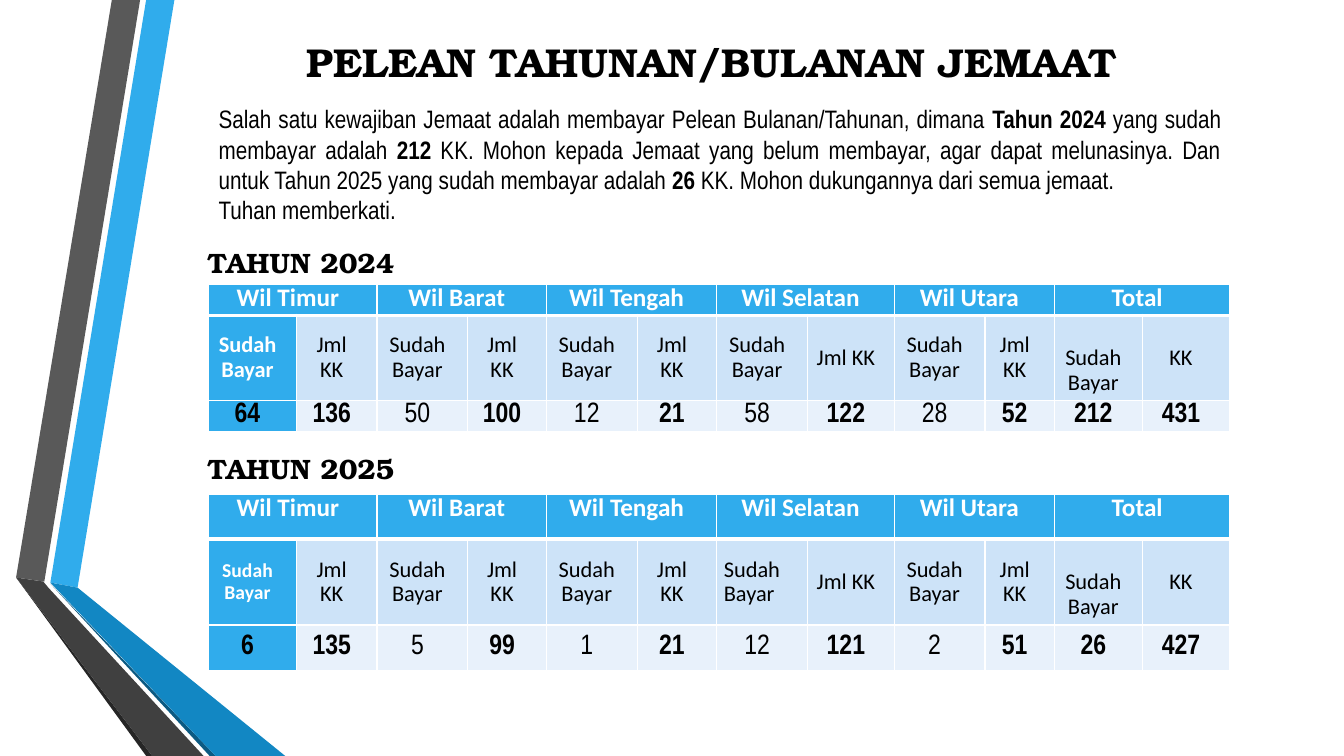
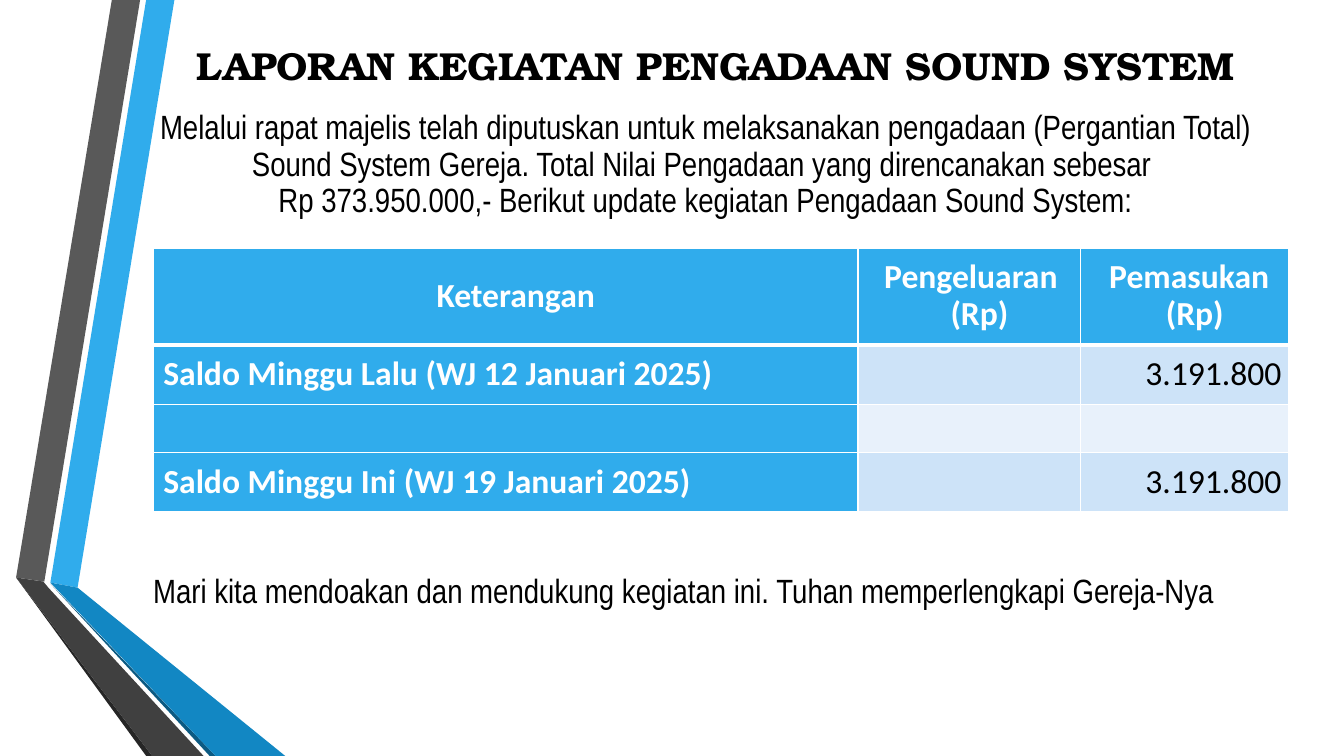
import lxml.etree
import pptx
import pptx.dml.color
import pptx.enum.text
import pptx.oxml.ns
import pptx.util

# The slide is a grid of 133.3 columns by 75 rows, each a tenth of an inch.
COLUMNS, ROWS = 133.3, 75
TITLE_FONT, BODY_FONT, TABLE_FONT = "TeX Gyre Bonum", "Arial Narrow", "Calibri"
BLACK, WHITE, BLUE = "000000", "FFFFFF", "30ACEC"
BAND_FILLS = ("E8F1FB", "CDE3F8")
ALIGN = pptx.enum.text.PP_ALIGN
ANCHOR = pptx.enum.text.MSO_ANCHOR

RIBBONS = [
    (BLUE, [(5, 57.8), (7.7, 58.3), (17.3, 0), (14.5, 0)]),
    ("595959", [(13.9, 0), (11.1, 0), (1.6, 57.3), (4.4, 57.7)]),
    ("262626", [(1.6, 57.3), (14.5, 75), (15.1, 75)]),
    ("0C5A82", [(5, 57.9), (20.8, 75), (21.4, 75)]),
    ("1287C3", [(5, 57.8), (21.4, 75), (28.3, 75), (7.7, 58.3)]),
    ("404040", [(20.2, 75), (4.8, 58.3), (4.3, 57.7), (1.6, 57.3), (15.1, 75)]),
]


def grid(units):
    return pptx.util.Inches(units / 10)


def color(hex_string):
    return pptx.dml.color.RGBColor.from_string(hex_string)


def write_text(frame, text, font=BODY_FONT, size=18, fill=BLACK, bold=False,
               align=ALIGN.LEFT, spacing=None, indent=(0, 0)):
    """Write one paragraph per line; parts between ** are bold.

    indent holds the left margin and the first-line offset in grid columns.
    """
    for number, line in enumerate(text.split("\n")):
        paragraph = frame.add_paragraph() if number else frame.paragraphs[0]
        paragraph.alignment = align
        paragraph.line_spacing = spacing
        properties = paragraph._p.get_or_add_pPr()
        for name, units in zip(("marL", "indent"), indent):
            properties.set(name, str(grid(units)))
        for part_number, part in enumerate(line.split("**")):
            if part:
                run = paragraph.add_run()
                run.text = part
                run.font.name = font
                run.font.size = pptx.util.Pt(size)
                run.font.bold = bold or part_number % 2 == 1
                run.font.color.rgb = color(fill)


def set_borders(cell, **widths):
    """Draw white borders; widths are points by side: L, R, T, B."""
    properties = cell._tc.get_or_add_tcPr()
    for side, width in widths.items():
        line = lxml.etree.SubElement(properties, pptx.oxml.ns.qn(f"a:ln{side}"),
                                     w=str(pptx.util.Pt(width)))
        solid = lxml.etree.SubElement(line, pptx.oxml.ns.qn("a:solidFill"))
        lxml.etree.SubElement(solid, pptx.oxml.ns.qn("a:srgbClr"), val=WHITE)


class Deck:
    """Holds the presentation, its style and the current slide."""

    def __init__(self):
        self.presentation = pptx.Presentation()
        self.presentation.slide_width = grid(COLUMNS)
        self.presentation.slide_height = grid(ROWS)
        self.slide = None

    def new_slide(self):
        self.slide = self.presentation.slides.add_slide(self.presentation.slide_layouts[6])
        for fill, points in RIBBONS:
            self.polygon(points, fill)

    def polygon(self, points, fill):
        start, *others = [(grid(x), grid(y)) for x, y in points]
        builder = self.slide.shapes.build_freeform(*start)
        builder.add_line_segments(others, close=True)
        shape = builder.convert_to_shape()
        shape.shadow.inherit = False
        shape.fill.solid()
        shape.fill.fore_color.rgb = color(fill)
        shape.line.fill.background()

    def text(self, left, top, width, height, text, anchor=ANCHOR.TOP, **style):
        box = self.slide.shapes.add_textbox(*map(grid, (left, top, width, height)))
        box.text_frame.word_wrap = True
        box.text_frame.vertical_anchor = anchor
        write_text(box.text_frame, text, **style)

    def title(self, left, top, text, size):
        self.text(left, top, 109.6, 4.4, text, ANCHOR.MIDDLE, font=TITLE_FONT,
                  size=size, bold=True, align=ALIGN.CENTER)

    def heading(self, top, text):
        self.text(19.6, top, 43.7, 4.4, text, ANCHOR.MIDDLE, font=TITLE_FONT,
                  size=20, bold=True)

    def table(self, left, top, widths, heights, rows, right_margin=0.7):
        """Build a table from rows of (text, style); None extends the cell on its left."""
        frame = self.slide.shapes.add_table(
            len(heights), len(widths), grid(left), grid(top),
            grid(sum(widths)), grid(sum(heights)))
        table = frame.table
        table.first_row = table.horz_banding = False
        for column, width in zip(table.columns, widths):
            column.width = grid(width)
        for row, height in zip(table.rows, heights):
            row.height = grid(height)
        for i, row in enumerate(rows):
            for j, content in enumerate(row):
                cell = table.cell(i, j)
                set_borders(cell, L=1, R=1, T=3 if i == 1 else 1, B=1 if i else 3)
                cell.fill.solid()
                cell.fill.fore_color.rgb = color(BAND_FILLS[i % 2] if i and j else BLUE)
                if content is None:
                    table.cell(i, j - 1).merge(cell)
                else:
                    self.fill_cell(cell, right_margin, *content)

    def fill_cell(self, cell, right_margin, text, style):
        options = {"font": TABLE_FONT, "spacing": 0.9, "align": ALIGN.CENTER} | style
        cell.vertical_anchor = options.pop("anchor", ANCHOR.MIDDLE)
        cell.margin_left, cell.margin_right = grid(0.7), grid(right_margin)
        cell.margin_top, cell.margin_bottom = grid(options.pop("top_margin", 0)), 0
        write_text(cell.text_frame, text, **options)


def add_payment_table(deck, top, heights, numbers, label_styles):
    """Add one year's table; label_styles maps a column to its own label style."""
    regions = ["Wil Timur", "Wil Barat", "Wil Tengah", "Wil Selatan", "Wil Utara", "Total"]
    header_style = {"size": 18, "fill": WHITE, "bold": True, "anchor": ANCHOR.TOP}
    header = [cell for region in regions for cell in ((region, header_style), None)]
    last = len(numbers) - 1
    styles = {0: {"fill": WHITE, "bold": True}, last - 1: {"top_margin": 2.5}}
    labels = (["Sudah Bayar", "Jml KK"] * len(regions))[:-1] + ["KK"]
    label_row = [(label, {"size": 16} | styles.get(j, {}) | label_styles.get(j, {}))
                 for j, label in enumerate(labels)]
    number_row = [(str(number), {"font": BODY_FONT, "size": 20,
                                 "bold": j % 2 == 1 or j in (0, last - 1)})
                  for j, number in enumerate(numbers)]
    widths = [8.7, 8, 9, 7.8, 9, 7.9, 9, 8.6, 9, 6.9, 8.7, 8.7]
    deck.table(20.7, top, widths, heights, [header, label_row, number_row], right_margin=1.7)


def add_payment_slide(deck):
    deck.new_slide()
    deck.title(15.8, 3.9, "PELEAN TAHUNAN/BULANAN JEMAAT", 28.8)
    deck.text(20.7, 9.8, 101.4, 13.1,
              "Salah satu kewajiban Jemaat adalah membayar Pelean Bulanan/Tahunan, dimana "
              "**Tahun 2024** yang sudah membayar adalah **212** KK. Mohon kepada Jemaat yang "
              "belum membayar, agar dapat melunasinya. Dan untuk Tahun 2025 yang sudah membayar "
              "adalah **26** KK. Mohon dukungannya dari semua jemaat.\nTuhan memberkati.",
              align=ALIGN.JUSTIFY)
    deck.heading(23.8, "TAHUN 2024")
    add_payment_table(deck, 28.2, [3.1, 8.4, 3.1],
                      [64, 136, 50, 100, 12, 21, 58, 122, 28, 52, 212, 431], {})
    deck.heading(44.3, "TAHUN 2025")
    add_payment_table(deck, 49, [4.5, 8.5, 4.5],
                      [6, 135, 5, 99, 1, 21, 12, 121, 2, 51, 26, 427],
                      {0: {"size": 14}, 6: {"align": ALIGN.LEFT}})


def add_sound_system_slide(deck):
    deck.new_slide()
    deck.title(16.2, 4.2, "LAPORAN KEGIATAN PENGADAAN SOUND SYSTEM", 27.9)
    deck.text(12.1, 10.5, 113.7, 11.9,
              "Melalui rapat majelis telah diputuskan untuk melaksanakan pengadaan (Pergantian "
              "Total) Sound System Gereja. Total Nilai Pengadaan yang direncanakan sebesar \n"
              "Rp 373.950.000,- Berikut update kegiatan Pengadaan Sound System:",
              size=24, align=ALIGN.CENTER, spacing=0.9, indent=(2, 0))
    header = {"size": 24, "fill": WHITE, "bold": True}
    label = header | {"align": ALIGN.LEFT, "indent": (2, -1.7)}
    amount = {"size": 24, "align": ALIGN.RIGHT, "indent": (2, 0)}
    empty = ("", {})
    deck.table(15.2, 24.6, [69.9, 22.1, 20.6], [9.6, 5.9, 4.8, 5.9], [
        [("Keterangan", header | {"indent": (2, 0)}),
         ("Pengeluaran (Rp)", header | {"indent": (2, -1.7)}),
         ("Pemasukan (Rp)", header | {"indent": (2, -1.1)})],
        [("Saldo Minggu Lalu (WJ 12 Januari 2025)", label), empty, ("3.191.800", amount)],
        [empty] * 3,
        [("Saldo Minggu Ini (WJ 19 Januari 2025)", label), empty, ("3.191.800", amount)],
    ])
    deck.text(14.2, 56, 109.4, 5,
              "Mari kita mendoakan dan mendukung kegiatan ini. Tuhan memperlengkapi Gereja-Nya",
              size=24)


def main():
    deck = Deck()
    add_payment_slide(deck)
    add_sound_system_slide(deck)
    deck.presentation.save("out.pptx")


if __name__ == "__main__":
    main()
